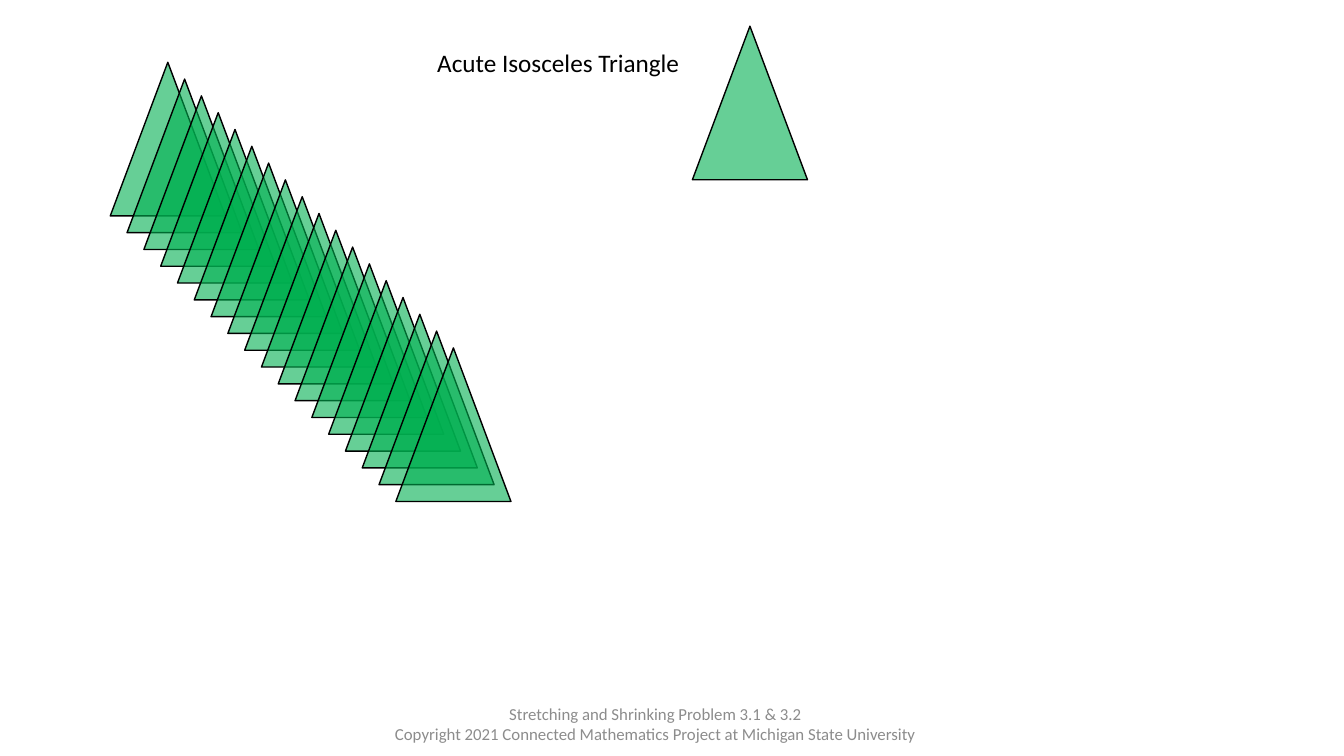
from lxml import etree
from pptx import Presentation
from pptx.dml.color import RGBColor
from pptx.enum.shapes import MSO_SHAPE
from pptx.enum.text import MSO_ANCHOR, MSO_AUTO_SIZE, PP_ALIGN
from pptx.oxml.ns import qn
from pptx.util import Cm, Pt

TRIANGLE = MSO_SHAPE.ISOSCELES_TRIANGLE
TOP, MIDDLE = MSO_ANCHOR.TOP, MSO_ANCHOR.MIDDLE
LEFT, CENTER = PP_ALIGN.LEFT, PP_ALIGN.CENTER
GROW, FIXED = MSO_AUTO_SIZE.SHAPE_TO_FIT_TEXT, MSO_AUTO_SIZE.NONE

COLORS = {"green": "00B050", "black": "000000", "gray": "8C8C8C"}
FONT = "Calibri"
TITLE = ["Acute Isosceles Triangle"]
FOOTER = [
    "Stretching and Shrinking Problem 3.1 & 3.2",
    "Copyright 2021 Connected Mathematics Project at Michigan State University",
]
TITLE_BOX = (10.77, 1.07, 8.51, 1.02)
FOOTER_BOX = (9.47, 17.75, 14.1, 0.99)
SIZE = (2.9, 3.87)
SAMPLE = (17.45, 0.66)
START = (2.78, 1.57)
COUNT = 18
STEP = 2.54 / 6
ALPHA = 60


def color(name):
    return RGBColor.from_string(COLORS[name])


def add_triangle(slide, left, top):
    shape = slide.shapes.add_shape(TRIANGLE, *map(Cm, (left, top, *SIZE)))
    shape.shadow.inherit = False
    shape.fill.solid()
    shape.fill.fore_color.rgb = color("green")
    tint = shape.fill._xPr.find(f".//{qn('a:srgbClr')}")
    etree.SubElement(tint, qn("a:alpha")).set("val", str(ALPHA * 1000))
    shape.line.color.rgb = color("black")
    shape.line.width = Pt(1)


def add_text(slide, box, lines, size, tone, align, anchor, fit):
    frame = slide.shapes.add_textbox(*map(Cm, box)).text_frame
    frame.word_wrap = True
    frame.auto_size = fit
    frame.vertical_anchor = anchor
    frame.text = "\n".join(lines)
    for para in frame.paragraphs:
        para.alignment = align
        para.font.name = FONT
        para.font.size = Pt(size)
        para.font.color.rgb = color(tone)


def main():
    """Build the slide with a stack of acute isosceles triangles."""
    deck = Presentation()
    deck.slide_width, deck.slide_height = Cm(33.87), Cm(19.05)
    slide = deck.slides.add_slide(deck.slide_layouts[6])
    left, top = START
    for index in range(COUNT):
        add_triangle(slide, left + index * STEP, top + index * STEP)
    add_triangle(slide, *SAMPLE)
    add_text(slide, TITLE_BOX, TITLE, 18, "black", LEFT, TOP, GROW)
    add_text(slide, FOOTER_BOX, FOOTER, 12, "gray", CENTER, MIDDLE, FIXED)
    deck.save("out.pptx")


if __name__ == "__main__":
    main()
